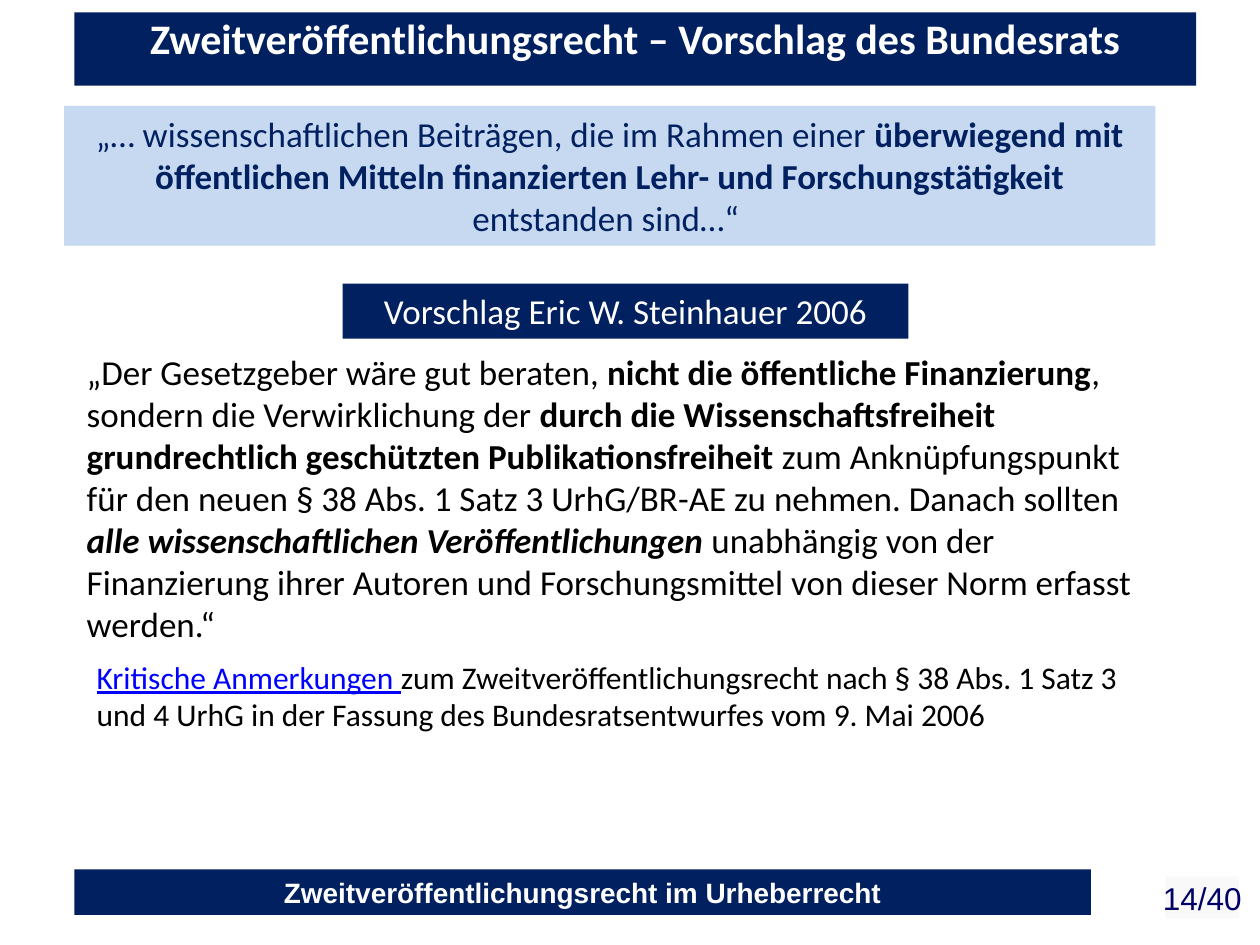
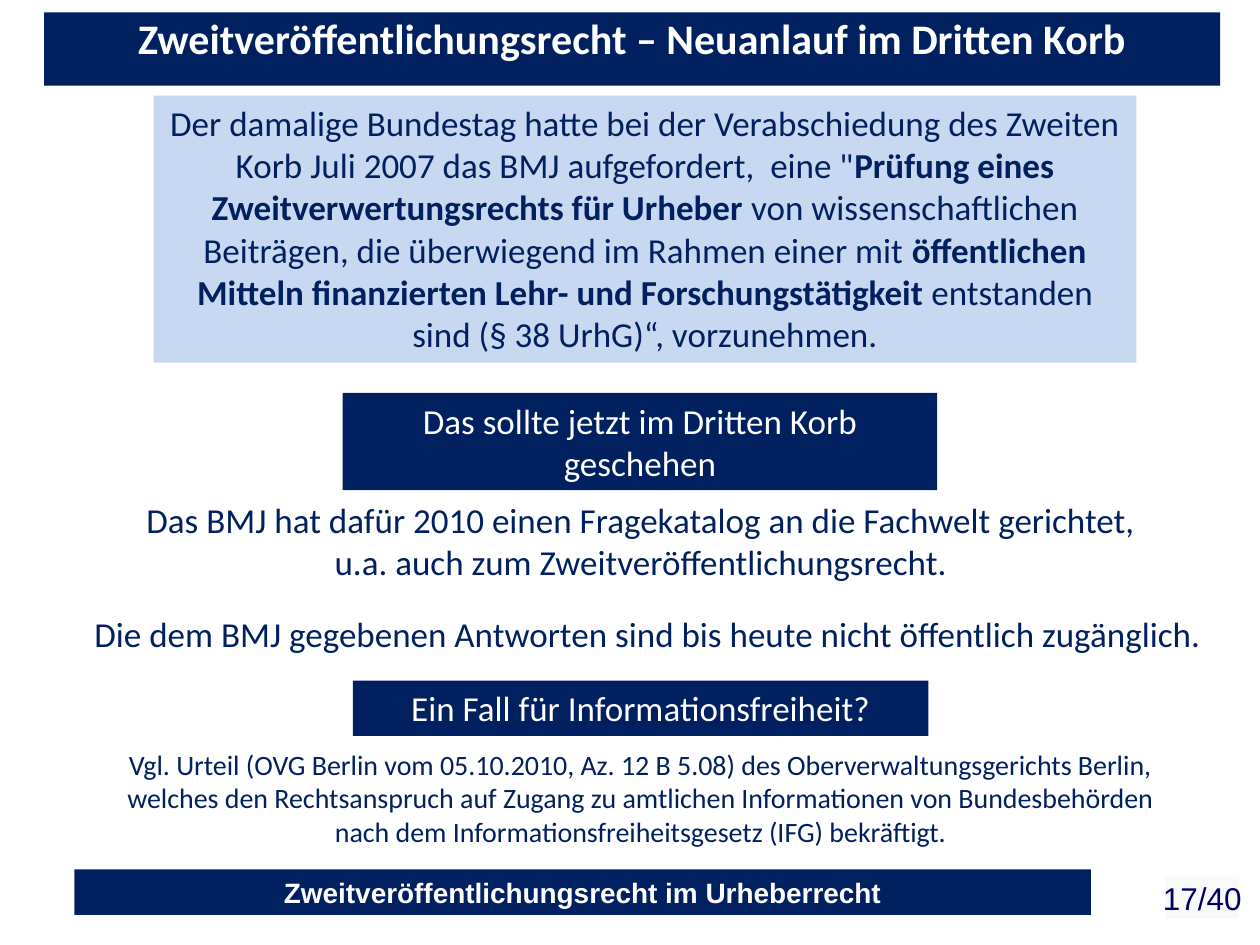
from pptx import Presentation
from pptx import util as u
from pptx.dml.color import RGBColor
from pptx.enum import shapes, text

NAVY = RGBColor(0x00, 0x20, 0x60)
PALE_BLUE = RGBColor(0xC6, 0xD9, 0xF1)
WHITE = RGBColor(0xFF, 0xFF, 0xFF)
BLACK = RGBColor(0x00, 0x00, 0x00)
LINK_BLUE = RGBColor(0x00, 0x00, 0xFF)
NUMBER_BLUE = RGBColor(0x00, 0x00, 0x66)
NUMBER_GREY = RGBColor(0xF9, 0xF9, 0xF9)

TITLE_ONLY = 5
PAGE_COUNT = 40
FOOTER = "Zweitveröffentlichungsrecht im Urheberrecht"

BOLD = {"bold": True}
BOLD_ITALIC = {"bold": True, "italic": True}
LINK = {"underline": True, "color": LINK_BLUE}

CENTER = text.PP_ALIGN.CENTER
LEFT = text.PP_ALIGN.LEFT
MIDDLE = text.MSO_ANCHOR.MIDDLE
TOP = text.MSO_ANCHOR.TOP


def write(shape, runs, size, color, font="Calibri", align=CENTER, anchor=TOP,
          wrap=True, spacing=None, **base):
    """Fill a shape with one paragraph; runs is a string or (text, format) pairs."""
    frame = shape.text_frame
    frame.word_wrap = wrap
    frame.auto_size = text.MSO_AUTO_SIZE.NONE
    frame.vertical_anchor = anchor
    paragraph = frame.paragraphs[0]
    paragraph.alignment = align
    if spacing:
        paragraph.line_spacing = spacing
    for words, changes in [(runs, {})] if isinstance(runs, str) else runs:
        run = paragraph.add_run()
        run.text = words
        values = {"name": font, "size": u.Pt(size), "color": color, **base, **changes}
        run.font.color.rgb = values.pop("color")
        for name, value in values.items():
            setattr(run.font, name, value)


def fill_plain(shape, color):
    shape.fill.solid()
    shape.fill.fore_color.rgb = color
    shape.line.fill.background()


def add_box(slide, place, fill, runs, size, color, **style):
    box = slide.shapes.add_shape(shapes.MSO_SHAPE.RECTANGLE, *map(u.Pt, place))
    box.shadow.inherit = False
    fill_plain(box, fill)
    write(box, runs, size, color, **style)
    return box


def add_quote(slide, place, runs):
    add_box(slide, place, PALE_BLUE, runs, 20, NAVY)


def add_label(slide, place, words):
    add_box(slide, place, NAVY, words, 20, WHITE)


def add_text(slide, place, runs, size=20, color=NAVY, align=CENTER):
    box = slide.shapes.add_textbox(*map(u.Pt, place))
    write(box, runs, size, color, align=align)


def add_page(presentation, title, left, width, number):
    """Add a slide with its title band, footer band and page number."""
    slide = presentation.slides.add_slide(presentation.slide_layouts[TITLE_ONLY])
    band = slide.shapes.title
    place = {"left": left, "top": 7, "width": width, "height": 42}
    for name, value in place.items():
        setattr(band, name, u.Pt(value))
    fill_plain(band, NAVY)
    write(band, title, 24, WHITE, spacing=0.9, bold=True)

    footer = add_box(slide, (42.5, 496.8, 581, 26), NAVY, FOOTER, 16, WHITE,
                     font="Arial", anchor=MIDDLE, bold=True)
    for side in ("left", "top", "right", "bottom"):
        setattr(footer.text_frame, f"margin_{side}", 0)
    add_box(slide, (666, 501, 42, 24), NUMBER_GREY, f"{number}/{PAGE_COUNT}", 18,
            NUMBER_BLUE, font="Arial", anchor=MIDDLE, wrap=False)
    return slide


def build_bundesrat(presentation):
    slide = add_page(presentation, "Zweitveröffentlichungsrecht – Vorschlag des Bundesrats",
                     42.5, 641, 14)
    add_quote(slide, (36.7, 60.5, 623.5, 80), [
        ("„… wissenschaftlichen Beiträgen, die im Rahmen einer ", {}),
        ("überwiegend mit öffentlichen Mitteln finanzierten Lehr- und "
         "Forschungstätigkeit ", BOLD),
        ("entstanden sind…“ ", {}),
    ])
    add_text(slide, (42.5, 196.5, 629, 177), [
        ("„Der Gesetzgeber wäre gut beraten, ", {}),
        ("nicht die öffentliche Finanzierung", BOLD),
        (", sondern die Verwirklichung der ", {}),
        ("durch die Wissenschaftsfreiheit grundrechtlich geschützten "
         "Publikationsfreiheit ", BOLD),
        ("zum Anknüpfungspunkt für den neuen § 38 Abs. 1 Satz 3 UrhG/BR-AE zu nehmen. "
         "Danach sollten ", {}),
        ("alle wissenschaftlichen Veröffentlichungen ", BOLD_ITALIC),
        ("unabhängig von der Finanzierung ihrer Autoren und Forschungsmittel von dieser "
         "Norm erfasst werden.“", {}),
    ], color=BLACK, align=LEFT)
    add_label(slide, (195.8, 162, 323.3, 31.5), "Vorschlag Eric W. Steinhauer 2006")
    add_text(slide, (48.2, 372.2, 623.5, 51), [
        ("Kritische Anmerkungen ", LINK),
        ("zum Zweitveröffentlichungsrecht nach § 38 Abs. 1 Satz 3 und 4 UrhG in der "
         "Fassung des Bundesratsentwurfes vom 9. Mai 2006", {}),
    ], size=18, color=BLACK, align=LEFT)


def build_dritter_korb(presentation):
    slide = add_page(presentation, "Zweitveröffentlichungsrecht – Neuanlauf im Dritten Korb",
                     25.2, 672, 17)
    add_quote(slide, (87.8, 54.7, 561.6, 152.6), [
        ("Der damalige Bundestag hatte bei der Verabschiedung des Zweiten Korb Juli 2007 "
         "das BMJ aufgefordert,  eine \"", {}),
        ("Prüfung eines Zweitverwertungsrechts für Urheber ", BOLD),
        ("von wissenschaftlichen Beiträgen, die überwiegend im Rahmen einer mit ", {}),
        ("öffentlichen Mitteln finanzierten Lehr- und Forschungstätigkeit", BOLD),
        (" entstanden sind (§ 38 UrhG)“, vorzunehmen.", {}),
    ])
    add_label(slide, (195.8, 224.6, 339.8, 55.5),
              "Das sollte jetzt im Dritten Korb geschehen")
    add_text(slide, (65.5, 281.5, 601.2, 55.5),
             "Das BMJ hat dafür 2010 einen Fragekatalog an die Fachwelt gerichtet, "
             "u.a. auch zum Zweitveröffentlichungsrecht.")
    add_text(slide, (20.2, 346.3, 699.8, 31.5),
             "Die dem BMJ gegebenen Antworten sind bis heute nicht öffentlich zugänglich.")
    add_label(slide, (201.6, 389, 329, 31.5), "Ein Fall für Informationsfreiheit?")
    add_text(slide, (65.5, 423.4, 601.2, 65.5),
             "Vgl. Urteil (OVG Berlin vom 05.10.2010, Az. 12 B 5.08) des "
             "Oberverwaltungsgerichts Berlin, welches den Rechtsanspruch auf Zugang zu "
             "amtlichen Informationen von Bundesbehörden nach dem "
             "Informationsfreiheitsgesetz (IFG) bekräftigt.", size=16)


def main():
    presentation = Presentation()
    presentation.slide_width = u.Pt(720)
    presentation.slide_height = u.Pt(540)
    build_bundesrat(presentation)
    build_dritter_korb(presentation)
    presentation.save("out.pptx")


if __name__ == "__main__":
    main()
